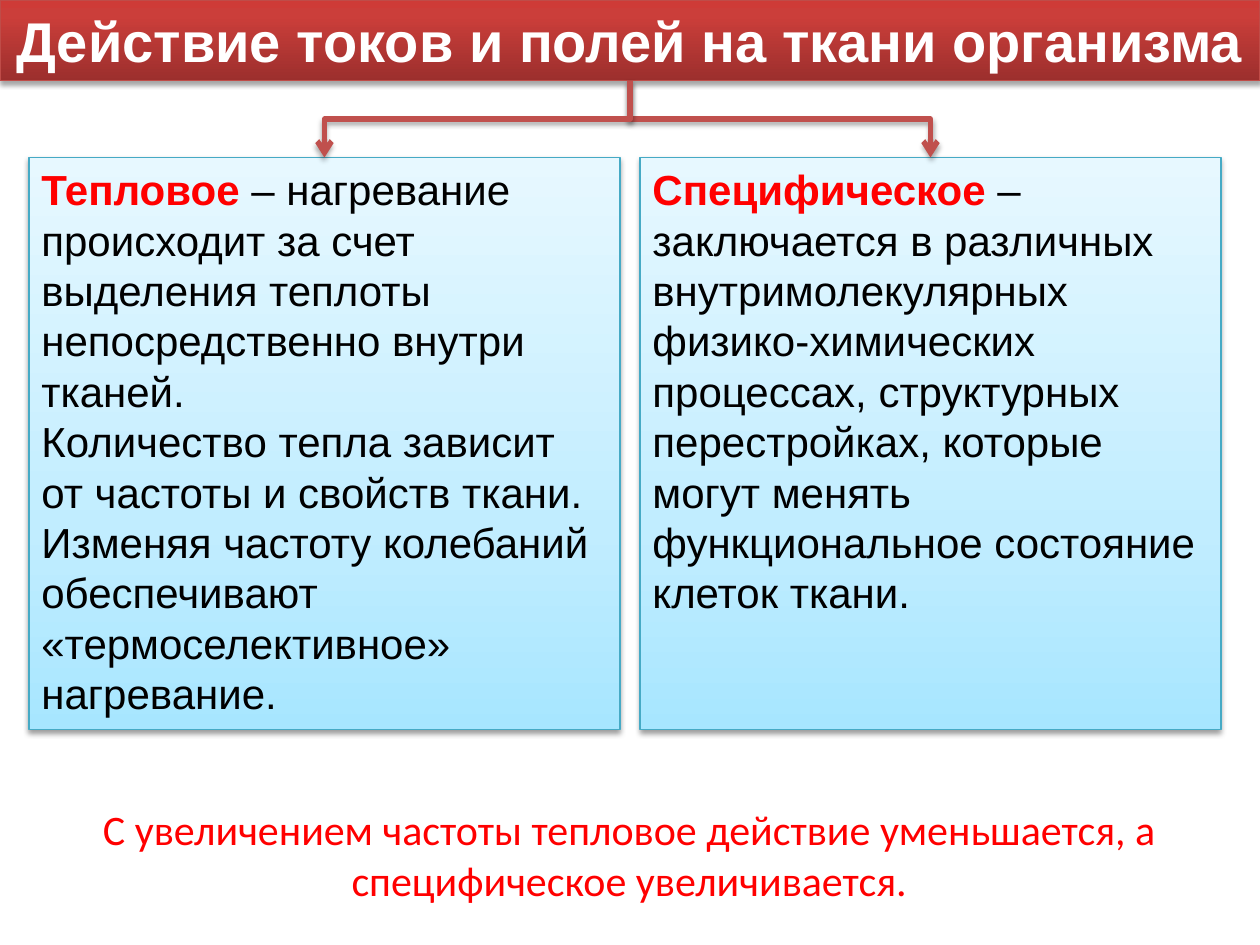
from dataclasses import dataclass

from lxml.etree import SubElement
from pptx import Presentation
from pptx.dml.color import RGBColor
from pptx.enum.shapes import MSO_CONNECTOR, MSO_SHAPE
from pptx.enum.text import MSO_ANCHOR, PP_ALIGN
from pptx.oxml.ns import qn
from pptx.util import Emu, Inches, Pt


@dataclass(frozen=True)
class Theme:
    title_fill: tuple = ((0, "9C2F2D"), (80, "CB3E3A"), (100, "CE3B37"))
    panel_fill: tuple = ((0, "A7E6FF"), (35, "C1EDFF"), (100, "E7F8FF"))
    title_line: str = "BF4C48"
    panel_line: str = "46AAC5"
    arrow: str = "C0504D"
    shadow: str = "000000"
    white: str = "FFFFFF"
    text: str = "000000"
    accent: str = "FF0000"
    font: str = "Arial"
    note_font: str = "Calibri"
    title_size: int = 32
    body_size: int = 24
    outline: float = 0.75
    arrow_width: float = 3


class SlideBuilder:
    def __init__(self, slide, theme):
        self.s = slide
        self.t = theme

    def _shadow(self, sp, alpha, dist):
        """Replace the inherited effects with a soft shadow falling downwards."""
        effects = SubElement(sp._element.spPr, qn("a:effectLst"))
        outer = SubElement(effects, qn("a:outerShdw"), blurRad=str(Pt(3.1)),
                           dist=str(Pt(dist)), dir="5400000", rotWithShape="0")
        clr = SubElement(outer, qn("a:srgbClr"), val=self.t.shadow)
        SubElement(clr, qn("a:alpha"), val=str(alpha * 1000))

    def _gradient(self, sp, stops):
        sp.fill.gradient()
        sp.fill.gradient_angle = 90
        gs_list = sp._element.spPr.find(".//" + qn("a:gsLst"))
        for gs in list(gs_list):
            gs_list.remove(gs)
        for pos, color in stops:
            gs = SubElement(gs_list, qn("a:gs"), pos=str(pos * 1000))
            SubElement(gs, qn("a:srgbClr"), val=color)

    def _format(self, r, size, color, bold=False, font=None):
        r.font.name = font or self.t.font
        r.font.size = Pt(size)
        r.font.bold = bold
        r.font.color.rgb = RGBColor.from_string(color)

    def _box(self, at, stops, line, alpha, dist):
        sp = self.s.shapes.add_shape(MSO_SHAPE.RECTANGLE, *map(Inches, at))
        self._gradient(sp, stops)
        sp.line.color.rgb = RGBColor.from_string(line)
        sp.line.width = Pt(self.t.outline)
        self._shadow(sp, alpha, dist)
        sp.text_frame.word_wrap = True
        sp.text_frame.vertical_anchor = MSO_ANCHOR.TOP
        return sp

    def title(self, at, text):
        sp = self._box(at, self.t.title_fill, self.t.title_line, 35, 1.8)
        sp.text_frame.text = text
        p = sp.text_frame.paragraphs[0]
        p.alignment = PP_ALIGN.CENTER
        self._format(p.runs[0], self.t.title_size, self.t.white, bold=True)
        return sp

    def panel(self, at, term, paragraphs):
        """Box whose first paragraph opens with a highlighted term."""
        sp = self._box(at, self.t.panel_fill, self.t.panel_line, 38, 1.6)
        tf = sp.text_frame
        for i, text in enumerate(paragraphs):
            p = tf.add_paragraph() if i else tf.paragraphs[0]
            p.alignment = PP_ALIGN.LEFT
            if i == 0:
                r = p.add_run()
                r.text = term
                self._format(r, self.t.body_size, self.t.accent, bold=True)
            r = p.add_run()
            r.text = text
            self._format(r, self.t.body_size, self.t.text)
        return sp

    def note(self, at, text):
        tf = self.s.shapes.add_textbox(*map(Inches, at)).text_frame
        tf.word_wrap = True
        tf.text = text
        p = tf.paragraphs[0]
        p.alignment = PP_ALIGN.CENTER
        self._format(p.runs[0], self.t.body_size, self.t.accent, font=self.t.note_font)

    def elbow_arrow(self, source, target):
        """Join the bottom of source to the top of target, leaving vertically."""
        c = self.s.shapes.add_connector(MSO_CONNECTOR.ELBOW, 0, 0, 0, 0)
        c.begin_connect(source, 2)
        c.end_connect(target, 0)
        x1, y1 = source.left + source.width // 2, source.top + source.height
        x2, y2 = target.left + target.width // 2, target.top
        # The elbow is drawn sideways and turned, so width and height swap.
        c.width, c.height = Emu(y2 - y1), Emu(abs(x2 - x1))
        c.left = Emu((x1 + x2 - c.width) // 2)
        c.top = Emu((y1 + y2 - c.height) // 2)
        to_right = x2 > x1
        xfrm = c._element.spPr.find(qn("a:xfrm"))
        xfrm.set("rot", str((270 if to_right else 90) * 60000))
        xfrm.set("flipH", "1" if to_right else "0")
        xfrm.set("flipV", "0")
        c.line.color.rgb = RGBColor.from_string(self.t.arrow)
        c.line.width = Pt(self.t.arrow_width)
        SubElement(c.line._get_or_add_ln(), qn("a:tailEnd"), type="arrow")
        self._shadow(c, 35, 1.8)


def main():
    prs = Presentation()
    prs.slide_width, prs.slide_height = Inches(10), Inches(7.5)
    b = SlideBuilder(prs.slides.add_slide(prs.slide_layouts[6]), Theme())

    title = b.title((0, 0, 10, 0.64), "Действие токов и полей на ткани организма")
    thermal = b.panel((0.23, 1.25, 4.69, 4.54), "Тепловое", [
        " – нагревание происходит за счет выделения теплоты "
        "непосредственно внутри тканей.",
        "Количество тепла зависит от частоты и свойств ткани. Изменяя частоту "
        "колебаний обеспечивают «термоселективное» нагревание.",
    ])
    specific = b.panel((5.08, 1.25, 4.61, 4.54), "Специфическое", [
        " – заключается в различных внутримолекулярных физико-химических "
        "процессах, структурных перестройках, которые могут менять "
        "функциональное состояние клеток ткани.",
    ])
    b.note((0.23, 6.33, 9.53, 0.91),
           "С увеличением частоты тепловое действие уменьшается, "
           "а специфическое увеличивается.")
    for panel in (specific, thermal):
        b.elbow_arrow(title, panel)

    prs.save("out.pptx")


if __name__ == "__main__":
    main()
